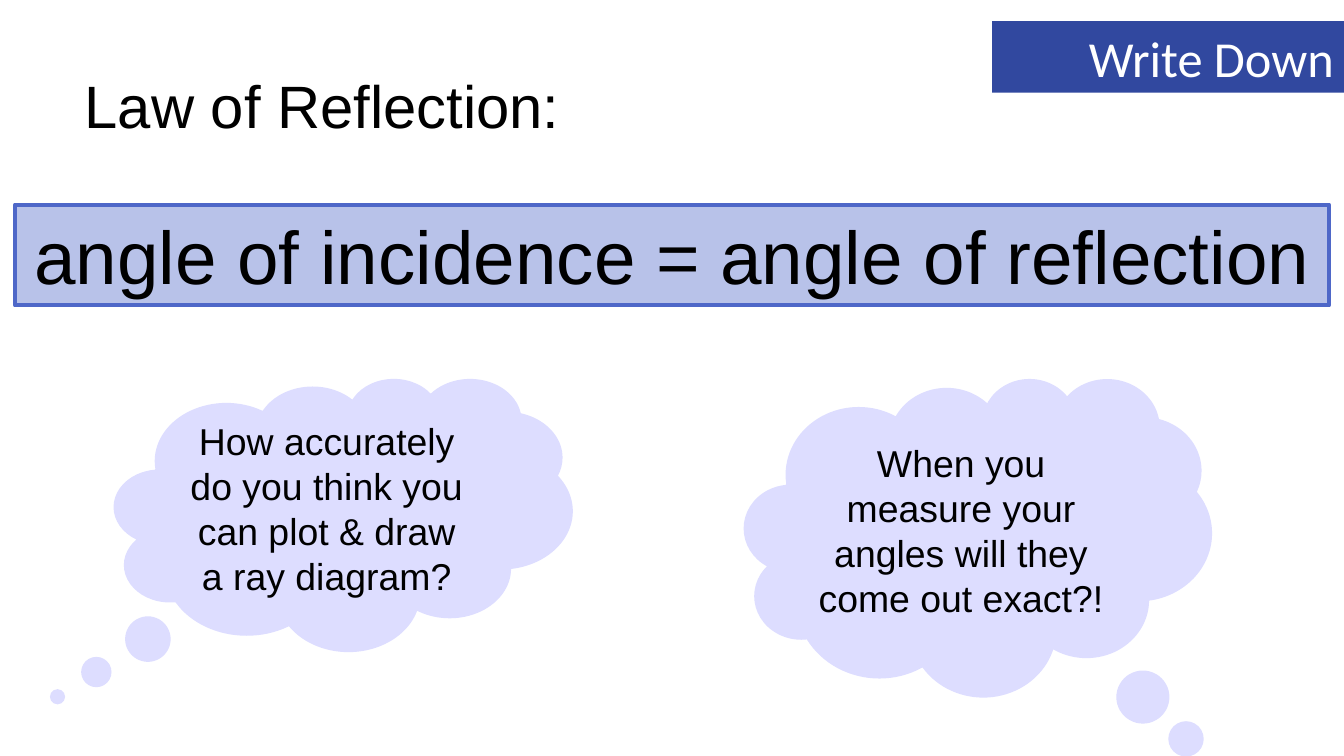
from dataclasses import dataclass

from pptx import Presentation
from pptx.dml.color import RGBColor
from pptx.enum.shapes import MSO_SHAPE
from pptx.enum.text import MSO_ANCHOR, MSO_AUTO_SIZE, PP_ALIGN
from pptx.util import Inches, Pt

BLACK = RGBColor(0x00, 0x00, 0x00)
WHITE = RGBColor(0xFF, 0xFF, 0xFF)
PALE_BLUE = RGBColor(0xB8, 0xC2, 0xE9)
BLUE = RGBColor(0x4E, 0x67, 0xC8)
DARK_BLUE = RGBColor(0x31, 0x48, 0x9F)
LAVENDER = RGBColor(0xDD, 0xDD, 0xFF)

WIDTH = Inches(13.33)
HEIGHT = Inches(7.5)


@dataclass(frozen=True)
class Area:
    """Position and size in percent of the slide's width and height."""
    left: float
    top: float
    width: float
    height: float


@dataclass(frozen=True)
class Panel:
    area: Area
    text: str
    size: float
    fill: RGBColor
    kind: MSO_SHAPE = MSO_SHAPE.RECTANGLE
    font: str = "Arial"
    color: RGBColor = BLACK
    align: PP_ALIGN = PP_ALIGN.CENTER
    outline: RGBColor | None = None
    tail: tuple[float, ...] = ()


TITLE_AREA = Area(5.55, 8.4, 45.61, 10.93)
PANELS = (
    Panel(Area(1.13, 27.07, 97.75, 13.33),
          "angle of incidence = angle of reflection", 53.3, PALE_BLUE,
          outline=BLUE),
    Panel(Area(8.48, 50, 34.13, 36.13),
          "How accurately do you think you can plot & draw a ray diagram?",
          26.7, LAVENDER, MSO_SHAPE.CLOUD_CALLOUT, tail=(-0.623, 0.667)),
    Panel(Area(55.36, 50, 34.81, 42.13),
          "When you measure your angles will they come out exact?!",
          26.7, LAVENDER, MSO_SHAPE.CLOUD_CALLOUT, tail=(0.51, 0.726)),
    Panel(Area(73.82, 2.8, 26.18, 9.47), "Write Down", 36, DARK_BLUE,
          font="Calibri", color=WHITE, align=PP_ALIGN.RIGHT),
)


def place(area: Area) -> tuple[int, int, int, int]:
    return (round(WIDTH * area.left / 100), round(HEIGHT * area.top / 100),
            round(WIDTH * area.width / 100), round(HEIGHT * area.height / 100))


def write(box, text: str, size: float, font: str, color: RGBColor,
          align: PP_ALIGN) -> None:
    frame = box.text_frame
    frame.word_wrap = True
    frame.auto_size = MSO_AUTO_SIZE.NONE
    frame.vertical_anchor = MSO_ANCHOR.MIDDLE
    para = frame.paragraphs[0]
    para.alignment = align
    span = para.add_run()
    span.text = text
    span.font.size = Pt(size)
    span.font.name = font
    span.font.color.rgb = color


def draw_panel(page, panel: Panel) -> None:
    box = page.shapes.add_shape(panel.kind, *place(panel.area))
    box.shadow.inherit = False
    box.fill.solid()
    box.fill.fore_color.rgb = panel.fill
    if panel.outline is None:
        box.line.fill.background()
    else:
        box.line.color.rgb = panel.outline
        box.line.width = Pt(3)
    for index, value in enumerate(panel.tail):
        box.adjustments[index] = value
    write(box, panel.text, panel.size, panel.font, panel.color, panel.align)


def main() -> None:
    deck = Presentation()
    deck.slide_width, deck.slide_height = WIDTH, HEIGHT
    page = deck.slides.add_slide(deck.slide_layouts[5])

    # Heading
    title = page.shapes.title
    title.left, title.top, title.width, title.height = place(TITLE_AREA)
    write(title, "Law of Reflection:", 42.7, "Arial", BLACK, PP_ALIGN.LEFT)

    # Law, thought clouds and corner label
    for panel in PANELS:
        draw_panel(page, panel)

    deck.save("out.pptx")


if __name__ == "__main__":
    main()
